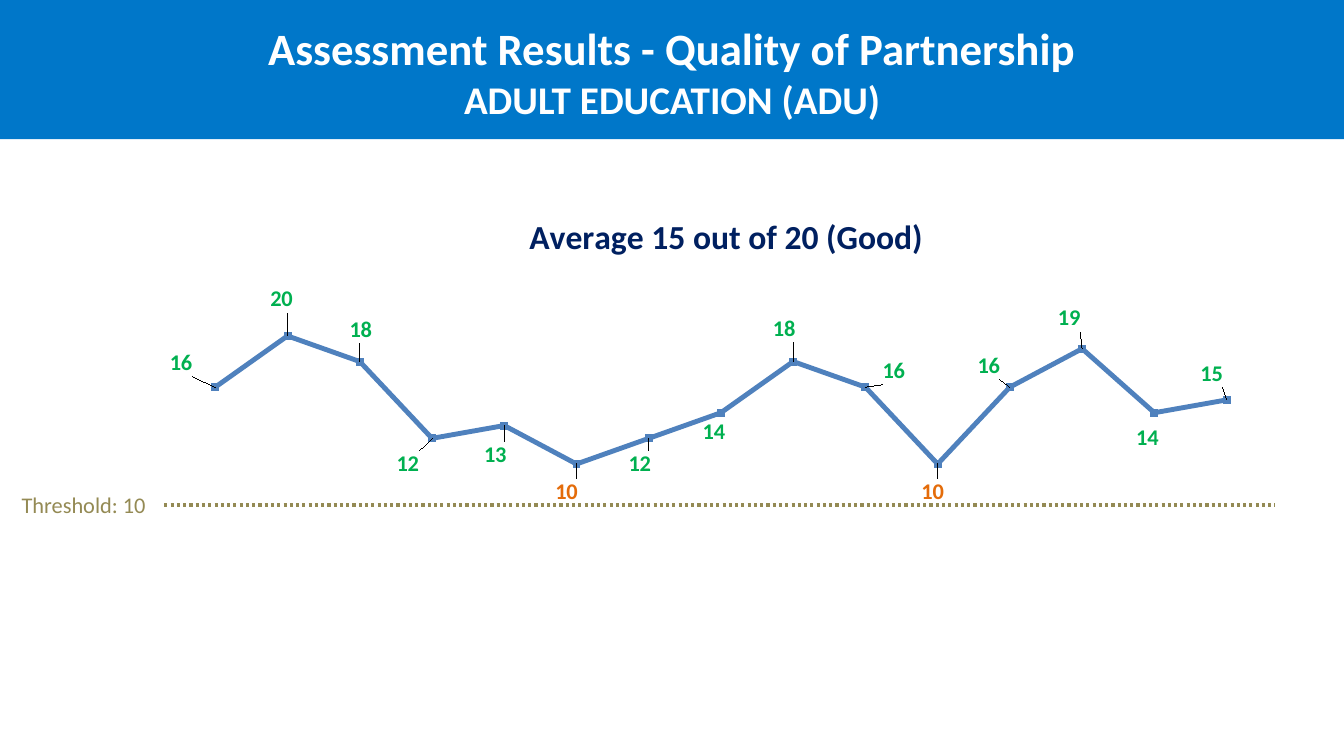
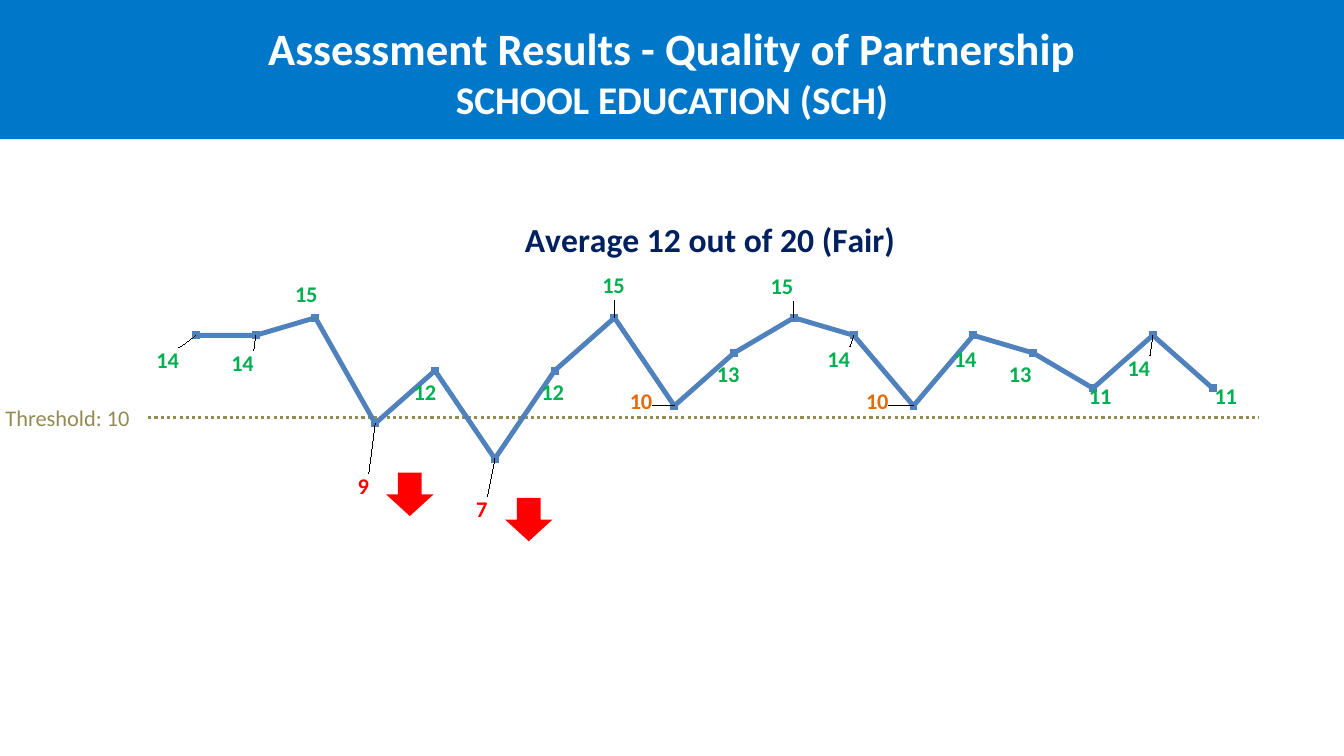
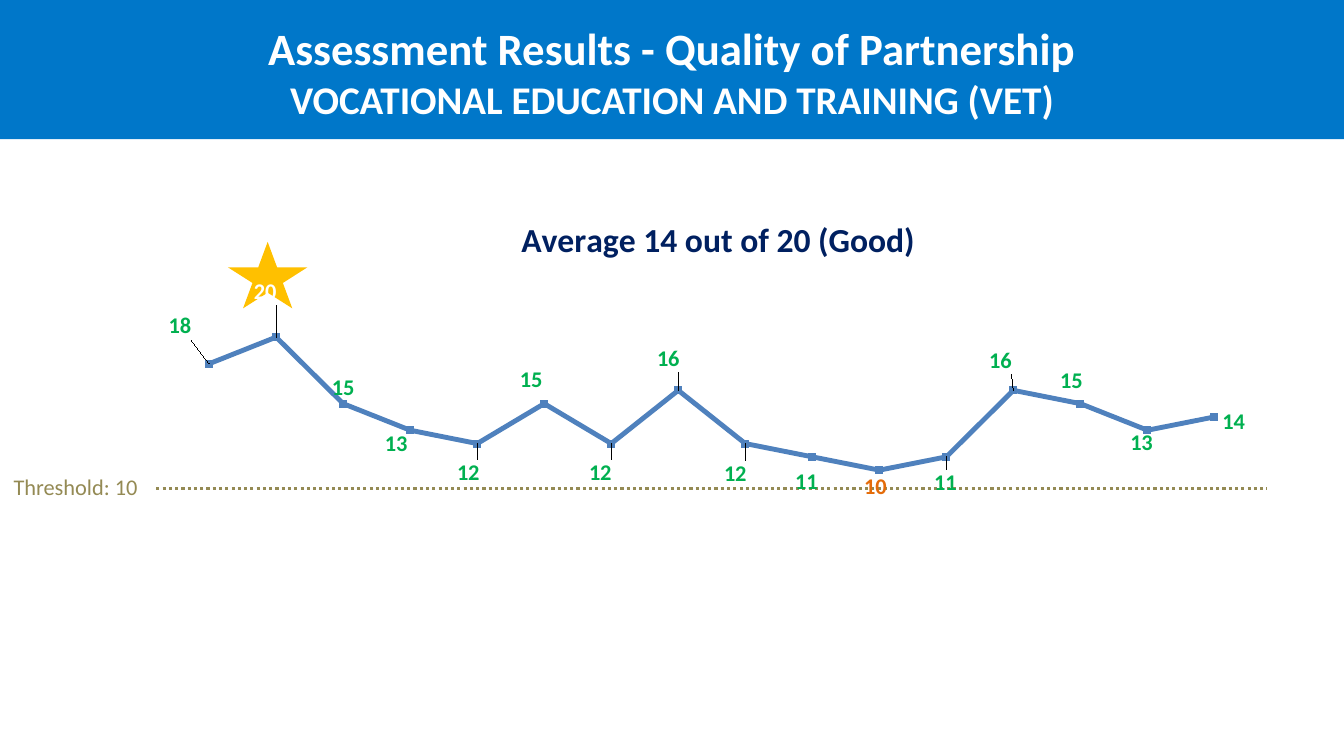
from lxml import etree
from pptx import Presentation
from pptx.chart.data import CategoryChartData
from pptx.dml.color import RGBColor
from pptx.enum.chart import XL_CHART_TYPE, XL_LABEL_POSITION, XL_MARKER_STYLE, XL_TICK_LABEL_POSITION
from pptx.enum.dml import MSO_LINE
from pptx.enum.shapes import MSO_CONNECTOR, MSO_SHAPE
from pptx.enum.text import MSO_ANCHOR, MSO_AUTO_SIZE, PP_ALIGN
from pptx.oxml.ns import qn
from pptx.util import Inches, Pt

BAND = RGBColor(0x00, 0x77, 0xC9)
WHITE = RGBColor(0xFF, 0xFF, 0xFF)
BLACK = RGBColor(0x00, 0x00, 0x00)
NAVY = RGBColor(0x00, 0x20, 0x60)
LINE_BLUE = RGBColor(0x4F, 0x81, 0xBD)
KHAKI = RGBColor(0x94, 0x8A, 0x54)
GREEN = RGBColor(0x00, 0xB0, 0x50)
ORANGE = RGBColor(0xE4, 0x6C, 0x0A)
RED = RGBColor(0xFF, 0x00, 0x00)
GOLD = RGBColor(0xFF, 0xC0, 0x00)

FONT = "Calibri"
WIDTH, HEIGHT, BAND_HEIGHT = 13.33, 7.5, 1.38
THRESHOLD = 10
THRESHOLD_LENGTH, LABEL_WIDTH, LABEL_HEIGHT = 11.02, 1.66, 0.37
HEADING = "Assessment Results - Quality of Partnership"

# points: value, then the label's shift right and down in hundredths of an inch
# threshold: left, line height, top of its label
# plot and title_at: shares of the chart's size
SECTORS = [
    dict(
        name="ADULT EDUCATION (ADU)", average="Average 15 out of 20 (Good)",
        chart_at=(1.6, 1.83, 11.08, 4.21), plot=(0.016, 0.206, 0.97, 0.755),
        title_at=(0.324, 0.055), top_value=25, threshold=(1.63, 5.01, 4.82),
        points=[(16, -34, -24), (20, -6, -36), (18, 1, -31), (12, -24, 26), (13, -9, 29),
                (10, -10, 28), (12, -9, 26), (14, -7, 19), (18, -9, -32), (16, 28, -16),
                (10, -5, 28), (16, -21, -21), (19, -13, -30), (14, -7, 25), (15, -15, -26)],
        marks=[], starred=None),
    dict(
        name="SCHOOL EDUCATION (SCH)", average="Average 12 out of 20 (Fair)",
        chart_at=(1.48, 1.86, 11.01, 4.08), plot=(0.015, 0.274, 0.97, 0.686),
        title_at=(0.333, 0.057), top_value=16, threshold=(1.47, 4.14, 3.96),
        points=[(14, -28, 26), (14, -13, 29), (15, -9, -22), (9, -12, 63), (12, -10, 22),
                (7, -13, 51), (12, -2, 22), (15, -1, -31), (10, -33, -4), (13, -6, 22),
                (15, -12, -30), (14, -15, 25), (10, -36, -4), (14, -8, 25), (13, -13, 22),
                (11, 7, 9), (14, -14, 34), (11, 13, 9)],
        marks=[(MSO_SHAPE.DOWN_ARROW, RED, (3.83, 4.69, 0.47, 0.43)),
               (MSO_SHAPE.DOWN_ARROW, RED, (5.01, 4.94, 0.47, 0.43))],
        starred=None),
    dict(
        name="VOCATIONAL EDUCATION AND TRAINING (VET)", average="Average 14 out of 20 (Good)",
        chart_at=(1.52, 1.86, 11.08, 4.21), plot=(0.02, 0.196, 0.96, 0.784),
        title_at=(0.324, 0.055), top_value=25, threshold=(1.55, 4.85, 4.64),
        points=[(18, -29, -37), (20, -11, -45), (15, 0, -15), (13, -14, 14), (12, -9, 29),
                (15, -13, -23), (12, -11, 29), (16, -10, -31), (12, -10, 30), (11, -6, 25),
                (10, -4, 17), (11, -1, 26), (16, -13, -29), (15, -9, -22), (13, -6, 13),
                (14, 19, 5)],
        marks=[(MSO_SHAPE.STAR_5_POINT, GOLD, (2.26, 2.4, 0.79, 0.66))],
        starred=1),
]


def style_font(font, size, color, bold=False):
    font.name, font.size, font.bold = FONT, Pt(size), bold
    font.color.rgb = color


def write(para, text, size, color, bold=False, align=PP_ALIGN.CENTER):
    para.alignment = align
    span = para.add_run()
    span.text = text
    style_font(span.font, size, color, bold)


def set_layout(parent, index, shares, plot=False):
    """Place a chart part by hand; shares are x, y and optionally width, height."""
    for old in parent.findall(qn("c:layout")):
        parent.remove(old)
    layout = etree.Element(qn("c:layout"))
    manual = etree.SubElement(layout, qn("c:manualLayout"))
    settings = [("layoutTarget", "inner")] if plot else []
    if plot or parent.tag == qn("c:title"):
        settings += [("xMode", "edge"), ("yMode", "edge")]
    settings += zip("xywh", shares)
    for tag, value in settings:
        etree.SubElement(manual, qn(f"c:{tag}")).set("val", str(value))
    parent.insert(index, layout)


def add_band(slide, name):
    band = slide.shapes.title
    band.left, band.top = 0, 0
    band.width, band.height = Inches(WIDTH), Inches(BAND_HEIGHT)
    band.fill.solid()
    band.fill.fore_color.rgb = BAND
    frame = band.text_frame
    frame.auto_size = MSO_AUTO_SIZE.NONE
    frame.vertical_anchor = MSO_ANCHOR.TOP
    frame.margin_top = Inches(0.21)
    write(frame.paragraphs[0], HEADING, 32, WHITE, bold=True)
    write(frame.add_paragraph(), name, 28, WHITE, bold=True)


def add_threshold(slide, left, line_y, label_top):
    line = slide.shapes.add_connector(
        MSO_CONNECTOR.STRAIGHT, Inches(left), Inches(line_y),
        Inches(left + THRESHOLD_LENGTH), Inches(line_y))
    line.line.color.rgb = KHAKI
    line.line.width = Pt(2.25)
    line.line.dash_style = MSO_LINE.ROUND_DOT
    etree.SubElement(line.element.spPr, qn("a:effectLst"))
    box = slide.shapes.add_textbox(
        Inches(left - 1.63), Inches(label_top), Inches(LABEL_WIDTH), Inches(LABEL_HEIGHT))
    box.text_frame.word_wrap = True
    write(box.text_frame.paragraphs[0], f"Threshold: {THRESHOLD}", 16, KHAKI)


def add_mark(slide, kind, color, place):
    mark = slide.shapes.add_shape(kind, *map(Inches, place))
    mark.shadow.inherit = False
    mark.fill.solid()
    mark.fill.fore_color.rgb = color
    mark.line.fill.background()


def score_color(value):
    if value < THRESHOLD:
        return RED
    return ORANGE if value == THRESHOLD else GREEN


def add_scores(slide, sector):
    points = sector["points"]
    data = CategoryChartData()
    data.categories = [str(number) for number in range(1, len(points) + 1)]
    data.add_series("Series 1", [value for value, _, _ in points])
    chart = slide.shapes.add_chart(
        XL_CHART_TYPE.LINE_MARKERS, *map(Inches, sector["chart_at"]), data).chart
    style_font(chart.font, 10, BLACK)
    chart.has_legend = False
    chart.has_title = True
    write(chart.chart_title.text_frame.paragraphs[0], sector["average"], 24, NAVY, bold=True)

    chart.category_axis.tick_label_position = XL_TICK_LABEL_POSITION.NONE
    chart.category_axis.format.line.fill.background()
    scale = chart.value_axis
    scale.minimum_scale, scale.maximum_scale = 0, sector["top_value"]
    scale.has_major_gridlines = False
    scale.visible = False

    plot = chart.plots[0]
    plot.vary_by_categories = False
    series = plot.series[0]
    series.smooth = False
    series.format.line.color.rgb = LINE_BLUE
    series.format.line.width = Pt(3.5)
    series.marker.style = XL_MARKER_STYLE.SQUARE
    series.marker.size = 5
    series.marker.format.fill.solid()
    series.marker.format.fill.fore_color.rgb = LINE_BLUE
    series.marker.format.line.color.rgb = LINE_BLUE

    for index, (value, _, _) in enumerate(points):
        label = series.points[index].data_label
        color = WHITE if index == sector["starred"] else score_color(value)
        style_font(label.font, 16, color, bold=True)
        label.position = XL_LABEL_POSITION.CENTER

    root = chart.element
    set_layout(root.xpath(".//c:plotArea")[0], 0, sector["plot"], plot=True)
    set_layout(root.xpath(".//c:title")[0], 1, sector["title_at"])
    width, height = sector["chart_at"][2:]
    for label, (_, right, down) in zip(root.xpath(".//c:dLbl"), points):
        set_layout(label, 1, (round(right / 100 / width, 4), round(down / 100 / height, 4)))


def main():
    deck = Presentation()
    deck.slide_width, deck.slide_height = Inches(WIDTH), Inches(HEIGHT)
    for sector in SECTORS:
        slide = deck.slides.add_slide(deck.slide_layouts[5])
        add_band(slide, sector["name"])
        add_threshold(slide, *sector["threshold"])
        for mark in sector["marks"]:
            add_mark(slide, *mark)
        add_scores(slide, sector)
    deck.save("out.pptx")


if __name__ == "__main__":
    main()
